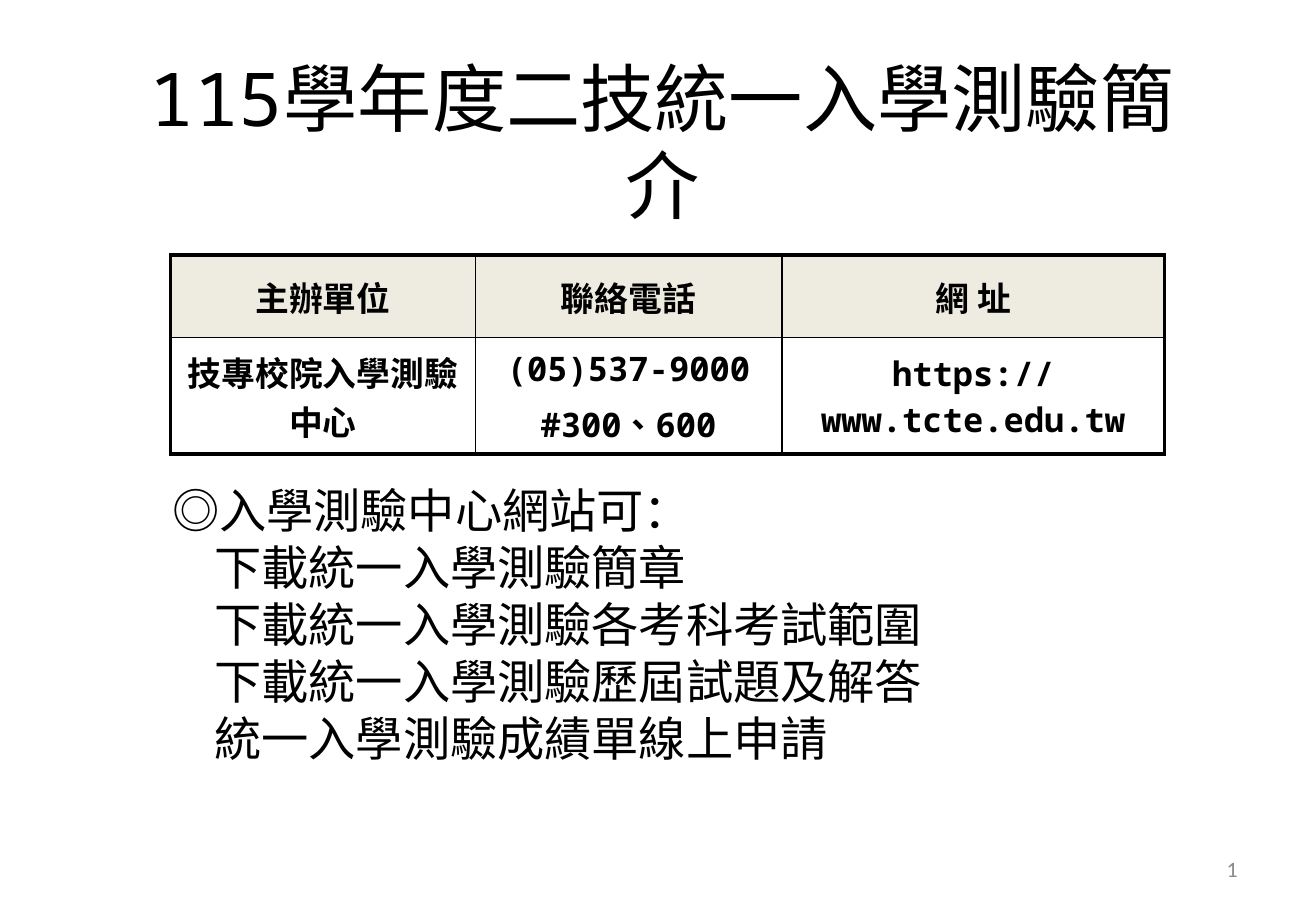
"""Build the slide introducing the unified entrance test."""
from lxml import etree
from pptx import Presentation
from pptx.dml.color import RGBColor
from pptx.enum.text import MSO_ANCHOR, MSO_AUTO_SIZE, PP_ALIGN
from pptx.oxml.ns import qn
from pptx.util import Pt

CENTER, RIGHT = PP_ALIGN.CENTER, PP_ALIGN.RIGHT
MIDDLE = MSO_ANCHOR.MIDDLE
NO_FIT, GROW = MSO_AUTO_SIZE.NONE, MSO_AUTO_SIZE.SHAPE_TO_FIT_TEXT
MONO, SANS, CHINESE = "Noto Sans Mono", "Calibri", "Noto Sans CJK TC"
BLACK, GRAY, BEIGE = "000000", "898989", "EEECE1"
OUTER, INNER = 2.25, 1


def color(value):
    return RGBColor.from_string(value)


def format_runs(paragraph, size, name, bold=False, ink=BLACK):
    for run in paragraph.runs:
        run.font.size, run.font.name, run.font.bold = Pt(size), name, bold
        run.font.color.rgb = color(ink)
        east_asian = etree.SubElement(run.font._element, qn("a:ea"))
        east_asian.set("typeface", CHINESE)


presentation = Presentation()
presentation.slide_width, presentation.slide_height = Pt(780), Pt(540)
slide = presentation.slides.add_slide(presentation.slide_layouts[5])

title = slide.shapes.title
title.left, title.top, title.width, title.height = Pt(61.2), Pt(26), Pt(663), Pt(116)
title.text_frame.text = "115學年度二技統一入學測驗簡介"
title.text_frame.auto_size = NO_FIT
title.text_frame.vertical_anchor = MIDDLE
heading = title.text_frame.paragraphs[0]
heading.alignment, heading.line_spacing = CENTER, Pt(51.6)
format_runs(heading, 44, MONO)

rows = [
    ["主辦單位", "聯絡電話", "網 址"],
    ["技專校院入學測驗中心", "(05)537-9000\n#300、600", "https://www.tcte.edu.tw"],
]
table = slide.shapes.add_table(
    2, 3, Pt(101), Pt(151.2), Pt(589.4), Pt(118)).table
for column, width in zip(table.columns, [180.8, 181.6, 227]):
    column.width = Pt(width)
for row, height in zip(table.rows, [49, 69]):
    row.height = Pt(height)
for i, texts in enumerate(rows):
    for j, text in enumerate(texts):
        cell = table.cell(i, j)
        cell.text_frame.text = text
        cell.vertical_anchor = MIDDLE
        for n, paragraph in enumerate(cell.text_frame.paragraphs):
            paragraph.alignment = CENTER
            paragraph.space_before = Pt(4 if n else 0)
            format_runs(paragraph, 20, MONO if i else SANS, bold=True)
        edges = {"lnL": j == 0, "lnR": j == 2, "lnT": i == 0, "lnB": i == 1}
        properties = cell._tc.get_or_add_tcPr()
        for tag, is_outer in edges.items():
            border = etree.SubElement(properties, qn(f"a:{tag}"))
            border.set("w", str(Pt(OUTER if is_outer else INNER)))
            fill = etree.SubElement(border, qn("a:solidFill"))
            etree.SubElement(fill, qn("a:srgbClr")).set("val", BLACK)
        if i == 0:
            cell.fill.solid()
            cell.fill.fore_color.rgb = color(BEIGE)
        else:
            cell.fill.background()

services = slide.shapes.add_textbox(Pt(95), Pt(281.5), Pt(595.4), Pt(177))
services.text_frame.word_wrap = True
services.text_frame.auto_size = GROW
services.text_frame.text = "\n".join([
    "◎入學測驗中心網站可：",
    "下載統一入學測驗簡章",
    "下載統一入學測驗各考科考試範圍",
    "下載統一入學測驗歷屆試題及解答",
    "統一入學測驗成績單線上申請",
])
for n, paragraph in enumerate(services.text_frame.paragraphs):
    paragraph.line_spacing = Pt(33.8)
    if n:
        paragraph._p.get_or_add_pPr().set("marL", str(Pt(25)))
    format_runs(paragraph, 28, MONO if n else CHINESE)

page_number = slide.shapes.add_textbox(Pt(558.7), Pt(500.4), Pt(182), Pt(28.8))
page_number.text_frame.word_wrap = True
page_number.text_frame.vertical_anchor = MIDDLE
page_number.text_frame.text = "1"
page_number.text_frame.paragraphs[0].alignment = RIGHT
format_runs(page_number.text_frame.paragraphs[0], 13, SANS, ink=GRAY)

presentation.save("out.pptx")
